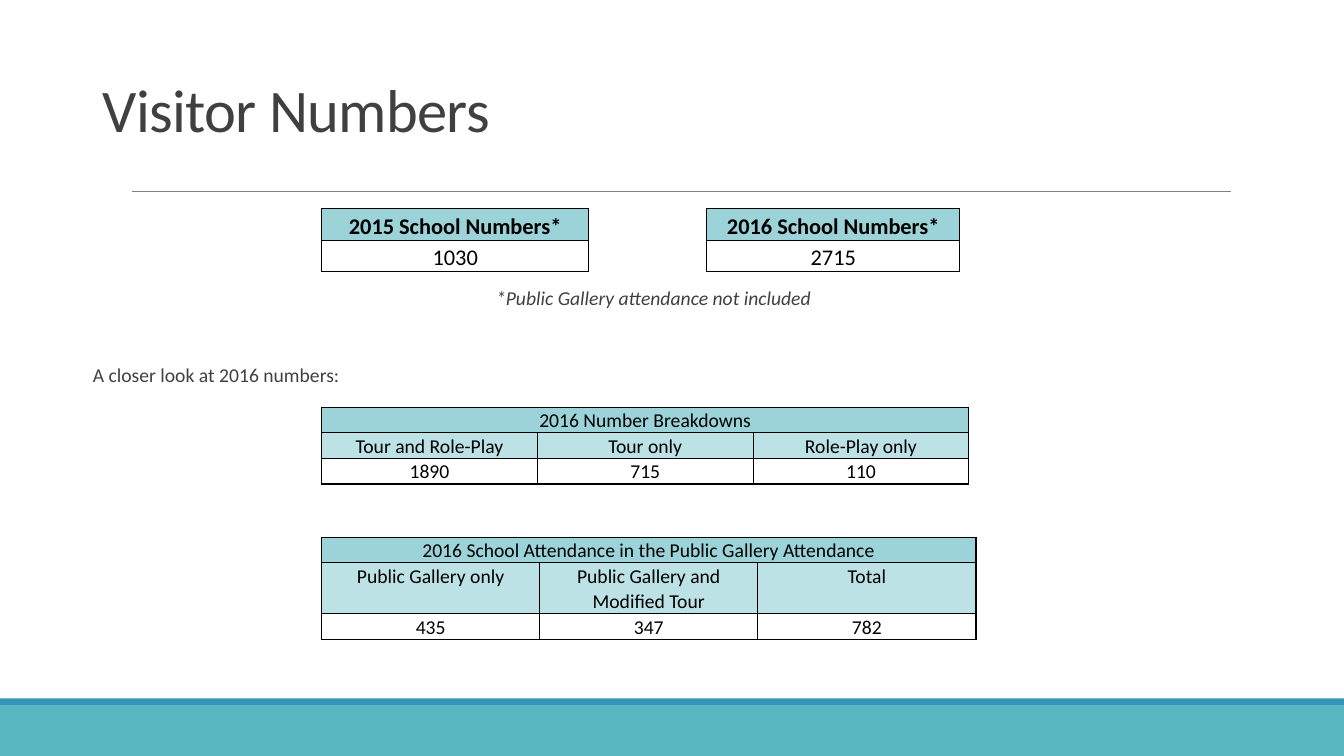
from pptx import Presentation
from pptx.dml.color import RGBColor
from pptx.enum.shapes import MSO_CONNECTOR, MSO_SHAPE
from pptx.enum.text import MSO_ANCHOR, MSO_AUTO_SIZE, PP_ALIGN
from pptx.oxml import parse_xml
from pptx.oxml.ns import nsdecls
from pptx.util import Inches, Pt
from lxml.etree import SubElement

COLORS = {
    "band": "58B6C0", "stripe": "3494BA", "rule": "808080", "text": "404040",
    "head": "9BD3D9", "subhead": "BCE2E6", "black": "000000",
}
FONT = "Calibri"
WIDTH, HEIGHT = 13.33, 7.5
MARGIN, TABLE_LEFT = 0.92, 3.19


def color(name):
    return RGBColor.from_string(COLORS[name])


def style(para, size, name, spacing):
    para.font.name, para.font.size = FONT, Pt(size)
    para.font.color.rgb = color(name)
    para.line_spacing = spacing


deck = Presentation()
deck.slide_width, deck.slide_height = Inches(WIDTH), Inches(HEIGHT)
page = deck.slides.add_slide(deck.slide_layouts[1])

# Footer bands
for top, height, name in [(7, 0.5, "band"), (6.93, 0.07, "stripe")]:
    band = page.shapes.add_shape(
        MSO_SHAPE.RECTANGLE, 0, Inches(top), deck.slide_width, Inches(height))
    band.shadow.inherit = False
    band.fill.solid()
    band.fill.fore_color.rgb = color(name)
    band.line.fill.background()

# Rule under the title
rule = page.shapes.add_connector(
    MSO_CONNECTOR.STRAIGHT, Inches(1.31), Inches(1.9), Inches(12.21), Inches(1.9))
rule.line.color.rgb = color("rule")
rule.line.width = Pt(0.5)
rule_props = rule.line._get_or_add_ln().getparent()
rule_props.append(parse_xml(f"<a:effectLst {nsdecls('a')}/>"))

# Title and body placeholders
title, body = page.placeholders
for box, top, height in [(title, 0.71, 0.78), (body, 2.81, 1.2)]:
    box.left, box.top = Inches(MARGIN), Inches(top)
    box.width, box.height = Inches(11.5), Inches(height)
    box.text_frame.auto_size = MSO_AUTO_SIZE.NONE

title.text_frame.text = "Visitor Numbers"
title.text_frame.vertical_anchor = MSO_ANCHOR.BOTTOM
heading = title.text_frame.paragraphs[0]
heading.alignment = PP_ALIGN.LEFT
style(heading, 43.2, "text", 0.85)
heading.runs[0].font._element.set("spc", "-50")

notes = body.text_frame
notes.margin_left = notes.margin_right = 0
notes.text = "*Public Gallery attendance not included\nA closer look at 2016 numbers:"
for para, indent, before, italic in zip(notes.paragraphs, (4, 0), (0, 40), (True, False)):
    style(para, 14, "text", 0.9)
    para.font.italic = italic
    para.space_before = Pt(before)
    props = para._p.get_or_add_pPr()
    props.set("marL", str(Inches(indent)))
    props.set("indent", "0")
    props.insert_element_before(
        parse_xml(f"<a:buNone {nsdecls('a')}/>"), "a:tabLst", "a:defRPr", "a:extLst")

# Tables: left, top, width, row heights, text size, line spacing, rows
tables = [
    (TABLE_LEFT, 2.07, 2.65, (0.31, 0.31), 16, 1.15,
     [["2015 School Numbers*"], ["1030"]]),
    (7.01, 2.07, 2.51, (0.31, 0.31), 16, 1.15,
     [["2016 School Numbers*"], ["2715"]]),
    (TABLE_LEFT, 4.04, 6.42, (0.25, 0.25, 0.25), 14, 1.07,
     [["2016 Number Breakdowns", "", ""],
      ["Tour and Role-Play", "Tour only", "Role-Play only"],
      ["1890", "715", "110"]]),
    (TABLE_LEFT, 5.33, 6.49, (0.25, 0.5, 0.25), 14, 1.07,
     [["2016 School Attendance in the Public Gallery Attendance", "", ""],
      ["Public Gallery only", "Public Gallery and Modified Tour", "Total"],
      ["435", "347", "782"]]),
]
for left, top, width, heights, size, spacing, rows in tables:
    columns = len(rows[0])
    table = page.shapes.add_table(
        len(rows), columns, Inches(left), Inches(top),
        Inches(width), Inches(sum(heights))).table
    table.first_row = table.horz_banding = False
    for row, height in zip(table.rows, heights):
        row.height = Inches(height)
    if columns > 1:
        table.cell(0, 0).merge(table.cell(0, columns - 1))
    fills = ["head", "subhead"][:len(rows) - 1] + [None]
    for r, (words, fill) in enumerate(zip(rows, fills)):
        for c, word in enumerate(words):
            cell = table.cell(r, c)
            cell.margin_left = cell.margin_right = Inches(0.07)
            cell.margin_top = cell.margin_bottom = 0
            # Borders come before the fill in the cell properties
            cell_props = cell._tc.get_or_add_tcPr()
            for side in ("lnL", "lnR", "lnT", "lnB"):
                cell_props.append(parse_xml(
                    f'<a:{side} {nsdecls("a")} w="{Pt(1)}"><a:solidFill>'
                    f'<a:srgbClr val="{COLORS["black"]}"/></a:solidFill></a:{side}>'))
            if fill:
                cell.fill.solid()
                cell.fill.fore_color.rgb = color(fill)
            else:
                cell.fill.background()
            cell.text = word
            para = cell.text_frame.paragraphs[0]
            para.alignment = PP_ALIGN.CENTER
            style(para, size, "black", spacing)
            para.font.bold = columns == 1 and r == 0

deck.save("out.pptx")
